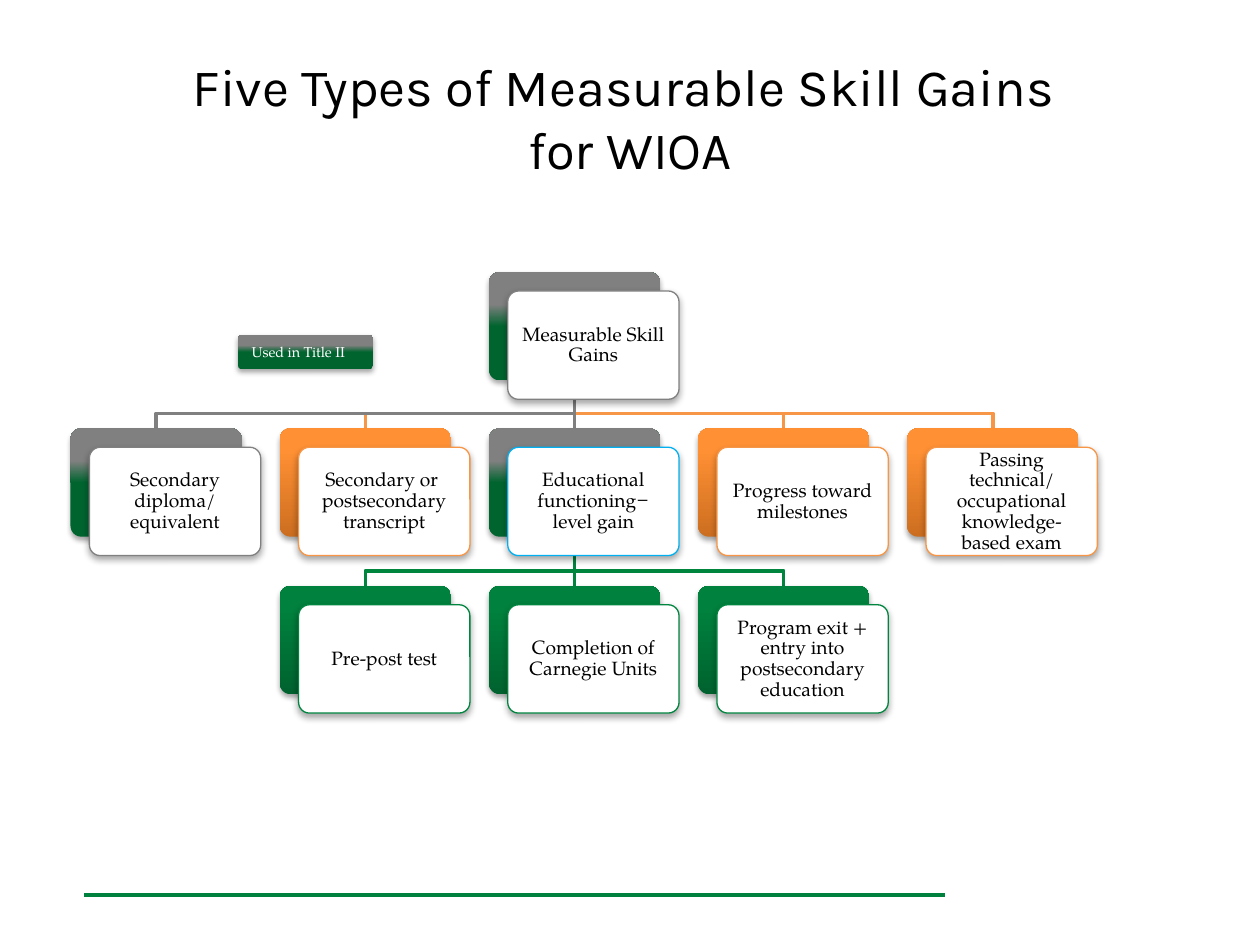
from dataclasses import dataclass

from lxml.etree import SubElement
from pptx import Presentation
from pptx.dml.color import RGBColor
from pptx.enum.shapes import MSO_CONNECTOR as Connector, MSO_SHAPE as Preset
from pptx.enum.text import MSO_ANCHOR as Anchor, PP_ALIGN as Align
from pptx.oxml.ns import qn
from pptx.util import Inches, Pt


@dataclass(frozen=True)
class Theme:
    title_font: str = "Karla"
    body_font: str = "TeX Gyre Pagella"
    title_size: float = 30
    card_size: float = 11
    legend_size: float = 8.2
    black: str = "000000"
    white: str = "FFFFFF"
    gray: str = "808080"
    orange: str = "F79646"
    green: str = "00853F"
    blue: str = "00B0F0"
    rule: str = "00823E"
    # Gradient stops run from the bottom edge to the top edge
    title_two_fill: tuple = ((0, "00642F"), (50, "00642F"), (70, "808080"), (100, "808080"))
    orange_fill: tuple = ((0, "CC6E20"), (80, "FF9034"), (100, "FF9136"))
    green_fill: tuple = ((0, "00632F"), (80, "00813D"), (100, "00813D"))


THEME = Theme()

# Grid of the chart, in inches
FIRST_COLUMN, COLUMN_STEP = 0.56, 1.66
ROW_TOPS = (2.16, 3.4, 4.65)
CARD_WIDTH, CARD_HEIGHT = 1.36, 0.86
CARD_OFFSET = 0.15
BRANCH_GAP = 0.12

# Column, row, text, backing gradient, outline
CARDS = (
    (2, 0, "Measurable Skill Gains", THEME.title_two_fill, THEME.gray),
    (0, 1, "Secondary diploma/ equivalent", THEME.title_two_fill, THEME.gray),
    (1, 1, "Secondary or \vpostsecondary transcript", THEME.orange_fill, THEME.orange),
    (2, 1, "Educational functioning‒level gain", THEME.title_two_fill, THEME.blue),
    (3, 1, "Progress toward milestones", THEME.orange_fill, THEME.orange),
    (4, 1, "Passing technical/ occupational knowledge-based exam", THEME.orange_fill, THEME.orange),
    (1, 2, "Pre-post test", THEME.green_fill, THEME.green),
    (2, 2, "Completion of Carnegie Units", THEME.green_fill, THEME.green),
    (3, 2, "Program exit + entry into postsecondary education", THEME.green_fill, THEME.green),
)

# Child column, child row, colour; gray branches lie over the orange ones
BRANCHES = (
    (4, 1, THEME.orange), (3, 1, THEME.orange), (1, 1, THEME.orange),
    (3, 2, THEME.green), (2, 2, THEME.green), (1, 2, THEME.green),
    (2, 1, THEME.gray), (0, 1, THEME.gray),
)


def color(value):
    return RGBColor.from_string(value)


def column_left(column):
    return FIRST_COLUMN + column * COLUMN_STEP


def column_center(column):
    return column_left(column) + CARD_WIDTH / 2


def write_text(shape, text, font, size, ink, align=Align.CENTER, spacing=1.0, inset=None):
    frame = shape.text_frame
    frame.word_wrap = True
    frame.vertical_anchor = Anchor.MIDDLE
    if inset is not None:
        frame.margin_left = frame.margin_right = Inches(inset)
        frame.margin_top = frame.margin_bottom = Inches(inset)
    paragraph = frame.paragraphs[0]
    paragraph.text = text
    paragraph.alignment = align
    paragraph.line_spacing = spacing
    for run in paragraph.runs:
        run.font.name = font
        run.font.size = Pt(size)
        run.font.color.rgb = color(ink)


def fill_gradient(shape, stops):
    shape.fill.gradient()
    shape.fill.gradient_angle = 90
    stop_list = shape.element.spPr.find(qn("a:gradFill")).find(qn("a:gsLst"))
    for stop in list(stop_list):
        stop_list.remove(stop)
    for position, value in stops:
        stop = SubElement(stop_list, qn("a:gs"), pos=str(position * 1000))
        SubElement(stop, qn("a:srgbClr"), val=value)


def add_shadow(shape, blur, distance):
    shape.shadow.inherit = False
    effects = shape.element.spPr.find(qn("a:effectLst"))
    shadow = SubElement(effects, qn("a:outerShdw"), blurRad=str(Pt(blur)),
                        dist=str(Pt(distance)), dir="5400000", rotWithShape="0")
    shade = SubElement(shadow, qn("a:srgbClr"), val=THEME.black)
    SubElement(shade, qn("a:alpha"), val="35000")


def add_rounded(slide, left, top, width, height):
    shape = slide.shapes.add_shape(Preset.ROUNDED_RECTANGLE, Inches(left), Inches(top),
                                   Inches(width), Inches(height))
    shape.adjustments[0] = 0.1
    return shape


def add_backing(slide, left, top, width, height, stops):
    shape = add_rounded(slide, left, top, width, height)
    fill_gradient(shape, stops)
    shape.line.fill.background()
    add_shadow(shape, 3.1, 1.8)
    return shape


def add_card(slide, column, row, text, stops, outline):
    left, top = column_left(column), ROW_TOPS[row]
    add_backing(slide, left, top, CARD_WIDTH, CARD_HEIGHT, stops)
    card = add_rounded(slide, left + CARD_OFFSET, top + CARD_OFFSET, CARD_WIDTH, CARD_HEIGHT)
    card.fill.solid()
    card.fill.fore_color.rgb = color(THEME.white)
    card.line.color.rgb = color(outline)
    card.line.width = Pt(0.75)
    add_shadow(card, 4, 2)
    write_text(card, text, THEME.body_font, THEME.card_size, THEME.black,
               spacing=0.9, inset=0.07)


def add_line(slide, start, end, ink, width):
    line = slide.shapes.add_connector(Connector.STRAIGHT, *map(Inches, start + end))
    line.line.color.rgb = color(ink)
    line.line.width = Pt(width)
    SubElement(line.element.spPr, qn("a:effectLst"))


def add_branch(slide, column, row, ink):
    """Link the middle card of the row above to a card of this row."""
    parent_x, child_x = column_center(2), column_center(column)
    start_y, end_y = ROW_TOPS[row - 1] + CARD_HEIGHT, ROW_TOPS[row]
    if column == 2:
        add_line(slide, (parent_x, start_y), (child_x, end_y), ink, 2)
        return
    bend_y = end_y - BRANCH_GAP
    builder = slide.shapes.build_freeform(Inches(parent_x), Inches(start_y))
    points = ((parent_x, bend_y), (child_x, bend_y), (child_x, end_y))
    builder.add_line_segments([(Inches(x), Inches(y)) for x, y in points], close=False)
    branch = builder.convert_to_shape()
    branch.fill.background()
    branch.line.color.rgb = color(ink)
    branch.line.width = Pt(2)
    branch.shadow.inherit = False


def add_title(slide, text):
    title = slide.shapes.title
    title.left, title.top = Inches(0.5), Inches(0.3)
    title.width, title.height = Inches(9), Inches(1.25)
    write_text(title, text, THEME.title_font, THEME.title_size, THEME.black)


def add_legend(slide, text):
    legend = add_backing(slide, 1.89, 2.66, 1.07, 0.27, THEME.title_two_fill)
    write_text(legend, text, THEME.body_font, THEME.legend_size, THEME.white, align=Align.LEFT)


def main():
    presentation = Presentation()
    presentation.slide_width, presentation.slide_height = Inches(10), Inches(7.5)
    slide = presentation.slides.add_slide(presentation.slide_layouts[5])

    # Footer rule and title
    add_line(slide, (0.67, 7.1), (7.5, 7.1), THEME.rule, 2.25)
    add_title(slide, "Five Types of Measurable Skill Gains \vfor WIOA")

    # Hierarchy: branches behind, cards in front
    for branch in BRANCHES:
        add_branch(slide, *branch)
    for card in CARDS:
        add_card(slide, *card)

    add_legend(slide, "Used in Title II")
    presentation.save("out.pptx")


if __name__ == "__main__":
    main()
